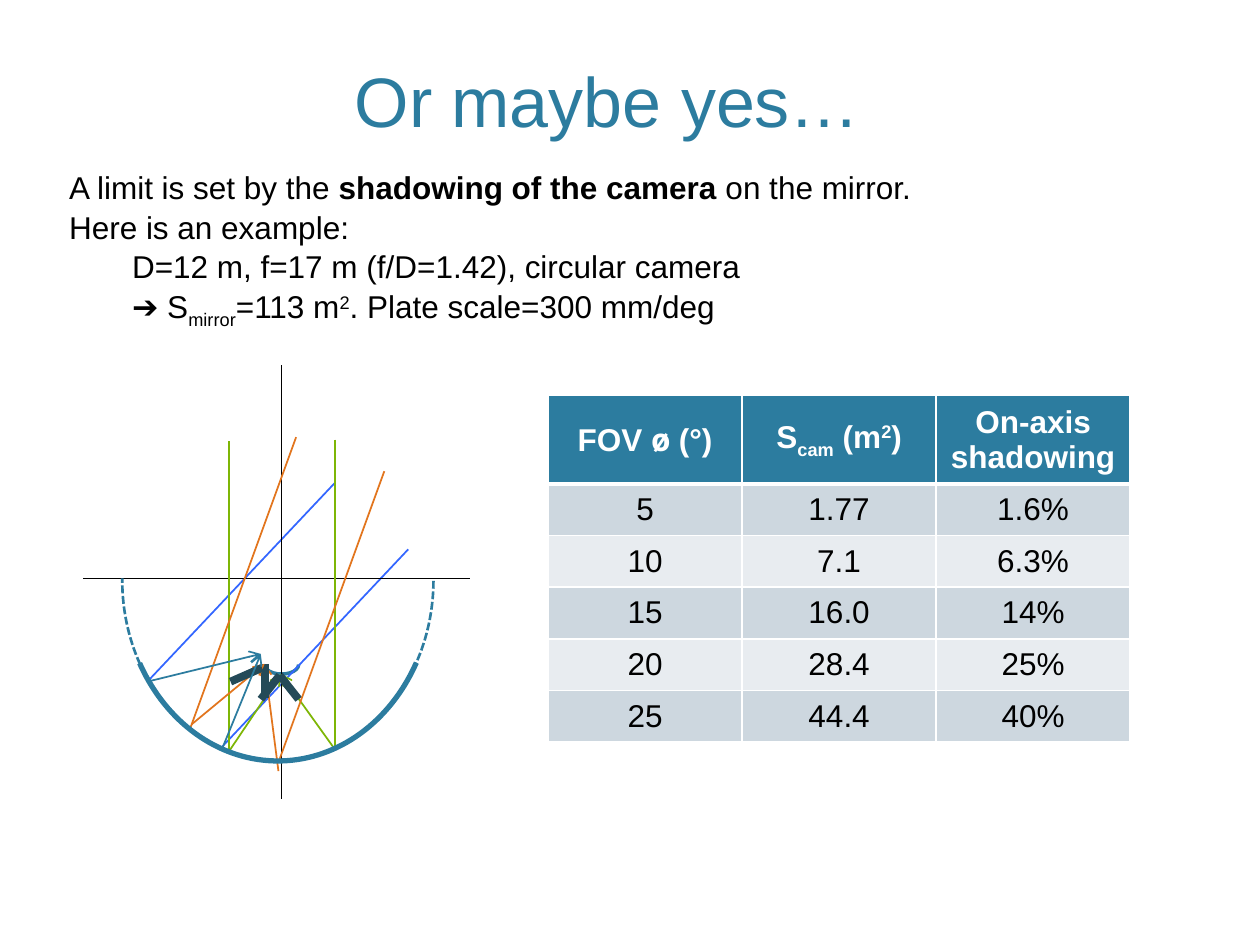
from pptx import Presentation
from pptx.dml.color import RGBColor
from pptx.enum.dml import MSO_LINE
from pptx.enum.shapes import MSO_CONNECTOR, MSO_SHAPE
from pptx.enum.text import MSO_ANCHOR, PP_ALIGN
from pptx.oxml.ns import qn
from pptx.util import Inches, Pt
from lxml import etree

STRAIGHT = MSO_CONNECTOR.STRAIGHT
ARC = MSO_SHAPE.ARC
DASH = MSO_LINE.SQUARE_DOT
LEFT, CENTER = PP_ALIGN.LEFT, PP_ALIGN.CENTER
TOP, MIDDLE, BOTTOM = MSO_ANCHOR.TOP, MSO_ANCHOR.MIDDLE, MSO_ANCHOR.BOTTOM

TEAL = RGBColor(0x2C, 0x7C, 0x9F)
DARK = RGBColor(0x24, 0x4A, 0x58)
BLUE = RGBColor(0x33, 0x66, 0xFF)
ORANGE = RGBColor(0xE2, 0x75, 0x1D)
GREEN = RGBColor(0x7E, 0xB6, 0x06)
BLACK = RGBColor(0, 0, 0)
WHITE = RGBColor(0xFF, 0xFF, 0xFF)
BANDS = [RGBColor(0xCD, 0xD7, 0xDF), RGBColor(0xE8, 0xEC, 0xF0)]

FONT = "Arial"
SYMBOL_FONT = "Open Sans"
BASELINES = {"sub": "-25000", "sup": "30000"}

TITLE = [("Or maybe yes…", "")]
BODY = [
    (0, [("A limit is set by the ", ""), ("shadowing of the camera ", "bold"),
         ("on the mirror.", "")]),
    (0, [("Here is an example:", "")]),
    (1, [("D=12 m, f=17 m (f/D=1.42), circular camera", "")]),
    (1, [("➔ S", ""), ("mirror", "sub"), ("=113 m", ""), ("2", "sup"),
         (". Plate scale=300 mm/deg", "")]),
]
HEADER = [
    [("FOV ", ""), ("ø ", "symbol"), ("(°)", "")],
    [("S", ""), ("cam", "sub"), (" (m", ""), ("2", "sup"), (")", "")],
    [("On-axis shadowing", "")],
]
ROWS = [
    ("5", "1.77", "1.6%"),
    ("10", "7.1", "6.3%"),
    ("15", "16.0", "14%"),
    ("20", "28.4", "25%"),
    ("25", "44.4", "40%"),
]
COLUMN_WIDTH, HEADER_HEIGHT, ROW_HEIGHT = 1.54, 0.68, 0.41

FOCUS_LEFT, FOCUS_TOP, FOCUS_AXIS = (2.07, 5.19), (2.1, 5.27), (2.23, 5.35)
LINES = [
    ((2.66, 3.83), (1.17, 5.41), BLUE, 1, False),
    ((3.24, 4.36), (1.76, 5.93), BLUE, 1, False),
    ((2.21, 6.12), FOCUS_TOP, ORANGE, 1, True),
    ((0.66, 4.59), (3.73, 4.59), BLACK, 0.25, False),
    ((2.23, 6.34), (2.23, 2.9), BLACK, 0.25, False),
    (FOCUS_TOP, (2.1, 5.54), DARK, 4.5, False),
    ((2.66, 3.49), (2.66, 5.95), GREEN, 1, False),
    ((2.66, 5.95), FOCUS_AXIS, GREEN, 1, True),
    ((1.82, 3.5), (1.82, 5.96), GREEN, 1, False),
    ((1.82, 5.96), FOCUS_AXIS, GREEN, 1, True),
    ((3.05, 3.74), (2.21, 6.05), ORANGE, 1, False),
    ((2.35, 3.47), (1.51, 5.78), ORANGE, 1, False),
    ((1.52, 5.75), FOCUS_TOP, ORANGE, 1, True),
    ((2.08, 5.3), (1.83, 5.41), DARK, 4.5, False),
    ((2.22, 5.36), (2.37, 5.55), DARK, 4.5, False),
    ((2.07, 5.55), (2.22, 5.36), DARK, 4.5, False),
    ((1.17, 5.41), FOCUS_LEFT, TEAL, 1, True),
    ((1.76, 5.95), FOCUS_LEFT, TEAL, 1, True),
]
MIRROR = (0.77, 3.37, 2.87, 2.47)
CAMERA_ARC = ((2.16, 5.14, 0.15, 0.27), (162.32, 55.03), 2, None)
MIRROR_ARCS = [
    (MIRROR, (180.47, 35.4), 3, None),
    (MIRROR, (162.15, 54.39), 1.5, DASH),
]


def write(para, runs, size, color, align=LEFT, bold=False):
    para.alignment = align
    para.font.size = Pt(size)
    para.font.name = FONT
    para.font.color.rgb = color
    para.font.bold = bold
    for text, style in runs:
        span = para.add_run()
        span.text = text
        if style == "bold":
            span.font.bold = True
        elif style == "symbol":
            span.font.name = SYMBOL_FONT
        elif style in BASELINES:
            span._r.get_or_add_rPr().set("baseline", BASELINES[style])


def add_box(page, place, anchor):
    frame = page.shapes.add_textbox(*map(Inches, place)).text_frame
    frame.word_wrap = True
    frame.vertical_anchor = anchor
    return frame


def add_line(page, start, end, color, width, arrow):
    line = page.shapes.add_connector(STRAIGHT, *map(Inches, start + end))
    line.line.color.rgb = color
    line.line.width = Pt(width)
    if arrow:
        etree.SubElement(line.line._get_or_add_ln(), qn("a:tailEnd"), type="arrow")
    etree.SubElement(line._element.spPr, qn("a:effectLst"))


def add_arc(page, place, angles, width, dash):
    arc = page.shapes.add_shape(ARC, *map(Inches, place))
    arc.rotation = 90
    arc.adjustments[0], arc.adjustments[1] = angles
    arc.shadow.inherit = False
    arc.fill.background()
    arc.line.color.rgb = TEAL
    arc.line.width = Pt(width)
    if dash:
        arc.line.dash_style = dash


def fill_cell(cell, runs, fill, color, bold, bottom):
    cell.vertical_anchor = MIDDLE
    write(cell.text_frame.paragraphs[0], runs, 18, color, CENTER, bold)
    properties = cell._tc.get_or_add_tcPr()
    for side, width in (("L", 1), ("R", 1), ("T", 1), ("B", bottom)):
        border = etree.SubElement(properties, qn(f"a:ln{side}"), w=str(Pt(width)))
        solid = etree.SubElement(border, qn("a:solidFill"))
        etree.SubElement(solid, qn("a:srgbClr"), val=str(WHITE))
    cell.fill.solid()
    cell.fill.fore_color.rgb = fill


def add_shadowing_table(page):
    place = (4.35, 3.14, COLUMN_WIDTH * len(HEADER),
             HEADER_HEIGHT + ROW_HEIGHT * len(ROWS))
    table = page.shapes.add_table(len(ROWS) + 1, len(HEADER), *map(Inches, place)).table
    for index, row in enumerate(table.rows):
        row.height = Inches(ROW_HEIGHT if index else HEADER_HEIGHT)
    for column, runs in enumerate(HEADER):
        fill_cell(table.cell(0, column), runs, TEAL, WHITE, True, 3)
    for index, values in enumerate(ROWS):
        for column, value in enumerate(values):
            fill_cell(table.cell(index + 1, column), [(value, "")],
                      BANDS[index % 2], BLACK, False, 1)
            if index == 0:
                top = table.cell(1, column)._tc.tcPr.find(qn("a:lnT"))
                top.set("w", str(Pt(3)))


def main():
    deck = Presentation()
    deck.slide_width, deck.slide_height = Inches(10), Inches(7.5)
    page = deck.slides.add_slide(deck.slide_layouts[6])

    title = add_box(page, (0.89, 0.49, 7.86, 0.68), BOTTOM)
    write(title.paragraphs[0], TITLE, 40, TEAL, CENTER)

    body = add_box(page, (0.45, 1.27, 9.2, 1.31), TOP)
    for index, (level, runs) in enumerate(BODY):
        para = body.add_paragraph() if index else body.paragraphs[0]
        para.level = level
        para.line_spacing = 1.05
        para._p.get_or_add_pPr().set("marL", str(Inches(0.5 * level)))
        write(para, runs, 18, BLACK)

    add_arc(page, *CAMERA_ARC)
    for line in LINES:
        add_line(page, *line)
    add_shadowing_table(page)
    for arc in MIRROR_ARCS:
        add_arc(page, *arc)

    deck.save("out.pptx")


if __name__ == "__main__":
    main()
